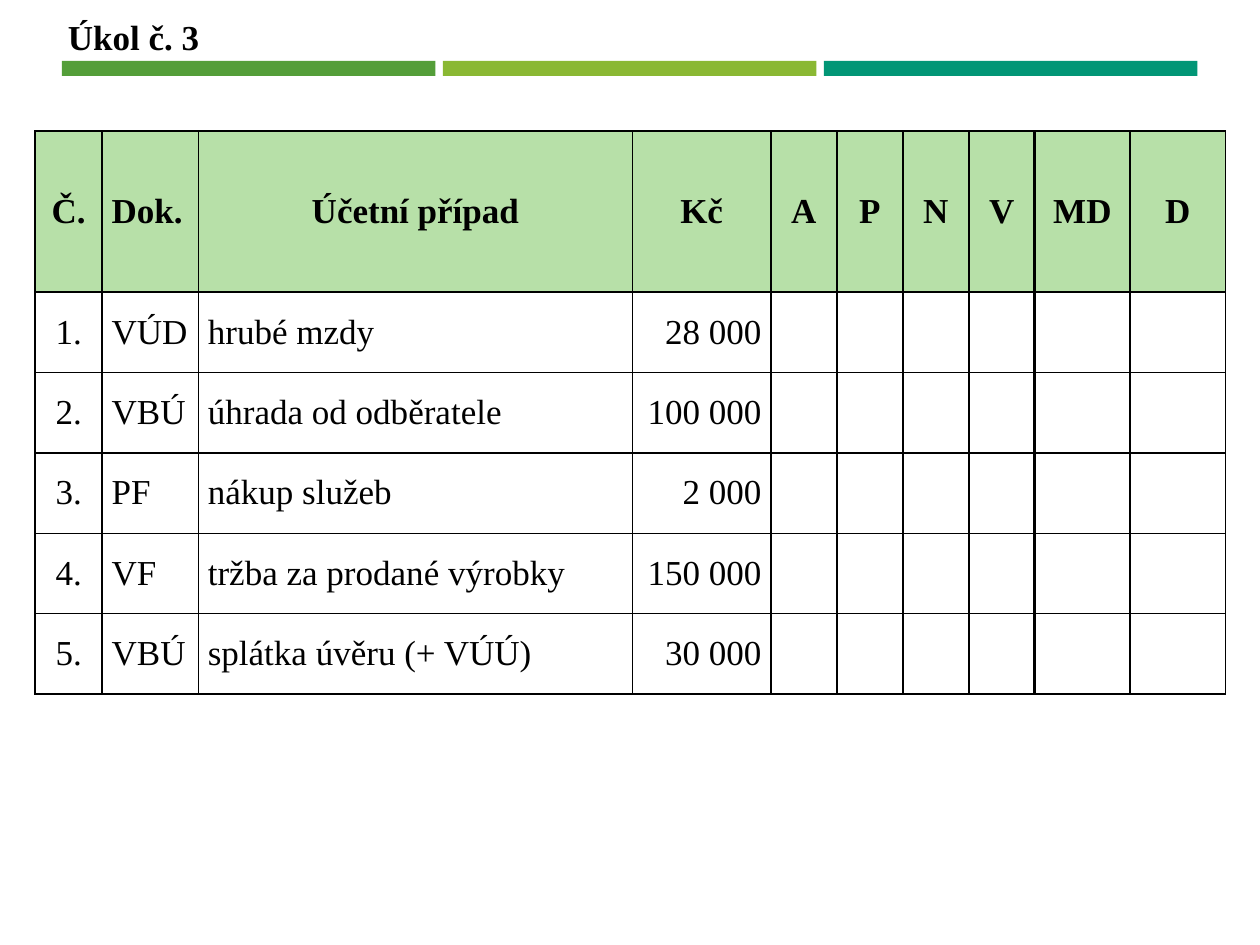
from lxml import etree
from pptx import Presentation
from pptx.dml.color import RGBColor
from pptx.enum import shapes, text
from pptx.oxml import ns
from pptx.util import Cm, Pt

COLORS = {
    "ink": "000000",
    "header": "B7E0A8",
    "bars": ("549E39", "8AB833", "029676"),
}
FONT = "Times New Roman"
FONT_SIZE = 20

TITLE = "Úkol č. 3"
LEFT, CENTER, RIGHT = text.PP_ALIGN.LEFT, text.PP_ALIGN.CENTER, text.PP_ALIGN.RIGHT
# heading, width in cm, heading alignment, body alignment
COLUMNS = [
    ("Č.", 1.35, CENTER, CENTER),
    ("Dok.", 1.94, LEFT, LEFT),
    ("Účetní případ", 8.75, CENTER, LEFT),
    ("Kč", 2.79, CENTER, RIGHT),
    *((name, 1.33, CENTER, CENTER) for name in "APNV"),
    ("MD", 1.92, CENTER, CENTER),
    ("D", 1.92, CENTER, CENTER),
]
ENTRIES = [
    ("1.", "VÚD", "hrubé mzdy", "28 000"),
    ("2.", "VBÚ", "úhrada od odběratele", "100 000"),
    ("3.", "PF", "nákup služeb", "2 000"),
    ("4.", "VF", "tržba za prodané výrobky", "150 000"),
    ("5.", "VBÚ", "splátka úvěru (+ VÚÚ)", "30 000"),
]
HEADER_HEIGHT, ROW_HEIGHT = 3.25, 1.62
THIN, THICK = 1, 2.25
THICK_EDGES = {("V", "R"), ("MD", "L")}


def rgb(value):
    return RGBColor.from_string(value)


def style(para, bold):
    para.font.name = FONT
    para.font.size = Pt(FONT_SIZE)
    para.font.bold = bold
    para.font.color.rgb = rgb(COLORS["ink"])


def add_border(cell, side, width):
    properties = cell._tc.get_or_add_tcPr()
    line = etree.SubElement(properties, ns.qn(f"a:ln{side}"), w=str(Pt(width)))
    fill = etree.SubElement(line, ns.qn("a:solidFill"))
    etree.SubElement(fill, ns.qn("a:srgbClr"), val=COLORS["ink"])


def add_bars(page):
    left, top, width, height, pitch = 1.25, 1.23, 7.53, 0.3, 7.68
    for index, color in enumerate(COLORS["bars"]):
        bar = page.shapes.add_shape(
            shapes.MSO_SHAPE.RECTANGLE,
            Cm(left + index * pitch), Cm(top), Cm(width), Cm(height))
        bar.shadow.inherit = False
        bar.fill.solid()
        bar.fill.fore_color.rgb = rgb(color)
        bar.line.fill.background()


def add_title(page):
    box = page.shapes.add_textbox(Cm(1.12), Cm(0.18), Cm(3.18), Cm(1.11))
    frame = box.text_frame
    frame.word_wrap = False
    frame.auto_size = text.MSO_AUTO_SIZE.SHAPE_TO_FIT_TEXT
    frame.text = TITLE
    style(frame.paragraphs[0], bold=True)


def fill_cell(cell, content, heading, align, is_header):
    cell.text = content
    cell.vertical_anchor = text.MSO_ANCHOR.MIDDLE
    cell.margin_left = cell.margin_right = Cm(0.19)
    cell.margin_top = cell.margin_bottom = 0
    para = cell.text_frame.paragraphs[0]
    para.alignment = align
    style(para, bold=is_header)
    for side in "LRTB":
        add_border(cell, side, THICK if (heading, side) in THICK_EDGES else THIN)
    if is_header:
        cell.fill.solid()
        cell.fill.fore_color.rgb = rgb(COLORS["header"])
    else:
        cell.fill.background()


def add_entries_table(page):
    rows = [[column[0] for column in COLUMNS], *ENTRIES]
    heights = [HEADER_HEIGHT] + [ROW_HEIGHT] * len(ENTRIES)
    table = page.shapes.add_table(
        len(rows), len(COLUMNS), Cm(0.71), Cm(2.64),
        Cm(sum(column[1] for column in COLUMNS)), Cm(sum(heights))).table
    table.first_row = table.horz_banding = False
    for index, column in enumerate(COLUMNS):
        table.columns[index].width = Cm(column[1])
    for r, (row, height) in enumerate(zip(rows, heights)):
        table.rows[r].height = Cm(height)
        for c, (heading, _, header_align, body_align) in enumerate(COLUMNS):
            content = row[c] if c < len(row) else ""
            align = body_align if r else header_align
            fill_cell(table.cell(r, c), content, heading, align, is_header=r == 0)


def main():
    deck = Presentation()
    deck.slide_width, deck.slide_height = Cm(25.4), Cm(19.05)
    page = deck.slides.add_slide(deck.slide_layouts[6])
    add_bars(page)
    add_title(page)
    add_entries_table(page)
    deck.save("out.pptx")


if __name__ == "__main__":
    main()
